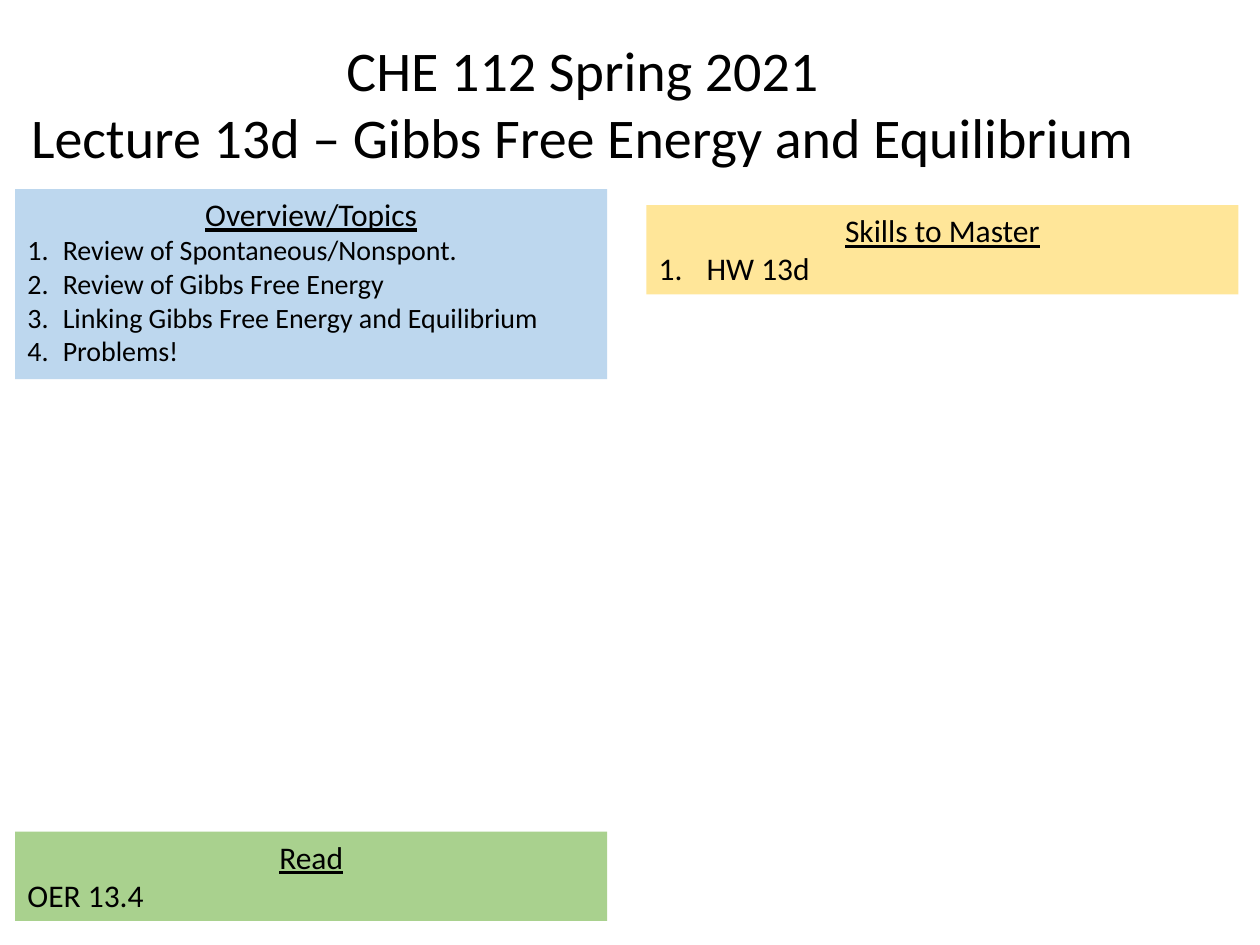
from lxml import etree
from pptx import Presentation, util as u
from pptx.dml.color import RGBColor
from pptx.enum import shapes, text
from pptx.oxml.ns import qn

HEADING = ["CHE 112 Spring 2021", "Lecture 13d – Gibbs Free Energy and Equilibrium"]
PANELS = [
    dict(title="Overview/Topics", column=0, top=0.2, height=1.51, fill="BDD7EE", size=16, indent=0.28,
         items=["Review of Spontaneous/Nonspont.", "Review of Gibbs Free Energy",
                "Linking Gibbs Free Energy and Equilibrium", "Problems!"]),
    dict(title="Skills to Master", column=1, top=0.217, height=0.71, fill="FFE699", size=18, indent=0.38,
         items=["HW 13d"]),
    dict(title="Read", column=0, top=0.88, height=0.71, fill="A9D18E", size=18, indent=0,
         items=["OER 13.4"]),
]
WIDTH, HEIGHT = 10, 7.5
MARGIN, PANEL_WIDTH, COLUMN_STEP = 0.12, 4.7, 5.01
CENTER, LEFT = text.PP_ALIGN.CENTER, text.PP_ALIGN.LEFT


def color(code):
    return RGBColor.from_string(code)


def box(*inches):
    return [u.Inches(length) for length in inches]


def write(frame, rows):
    for index, (words, align, style) in enumerate(rows):
        line = frame.paragraphs[0] if index == 0 else frame.add_paragraph()
        line.alignment = align
        run = line.add_run()
        run.text = words
        run.font.color.rgb = color("000000")
        for key, value in {"name": "Calibri", **style}.items():
            setattr(run.font, key, value)


def number(line, indent):
    props = line._p.get_or_add_pPr()
    props.set("marL", str(u.Inches(indent)))
    props.set("indent", str(-u.Inches(indent)))
    etree.SubElement(props, qn("a:buFont"), typeface="+mj-lt")
    etree.SubElement(props, qn("a:buAutoNum"), type="arabicPeriod")


def add_panel(slide, panel):
    left = MARGIN + panel["column"] * COLUMN_STEP
    card = slide.shapes.add_shape(shapes.MSO_SHAPE.RECTANGLE,
                                  *box(left, panel["top"] * HEIGHT, PANEL_WIDTH, panel["height"]))
    card.shadow.inherit = False
    card.fill.solid()
    card.fill.fore_color.rgb = color(panel["fill"])
    card.line.fill.background()
    frame = card.text_frame
    for key, value in dict(word_wrap=True, vertical_anchor=text.MSO_ANCHOR.TOP,
                           auto_size=text.MSO_AUTO_SIZE.SHAPE_TO_FIT_TEXT).items():
        setattr(frame, key, value)
    title = (panel["title"], CENTER, dict(size=u.Pt(18), underline=True))
    write(frame, [title] + [(item, LEFT, dict(size=u.Pt(panel["size"]))) for item in panel["items"]])
    if panel["indent"]:
        for line in frame.paragraphs[1:]:
            number(line, panel["indent"])


def main():
    deck = Presentation()
    deck.slide_width, deck.slide_height = box(WIDTH, HEIGHT)
    slide = deck.slides.add_slide(deck.slide_layouts[6])
    for panel in PANELS:
        add_panel(slide, panel)
    heading = slide.shapes.add_textbox(*box(0.1, 0.23, 9.05, 1.18)).text_frame
    heading.word_wrap = False
    heading.auto_size = text.MSO_AUTO_SIZE.SHAPE_TO_FIT_TEXT
    write(heading, [(words, CENTER, dict(size=u.Pt(32))) for words in HEADING])
    deck.save("out.pptx")


if __name__ == "__main__":
    main()
